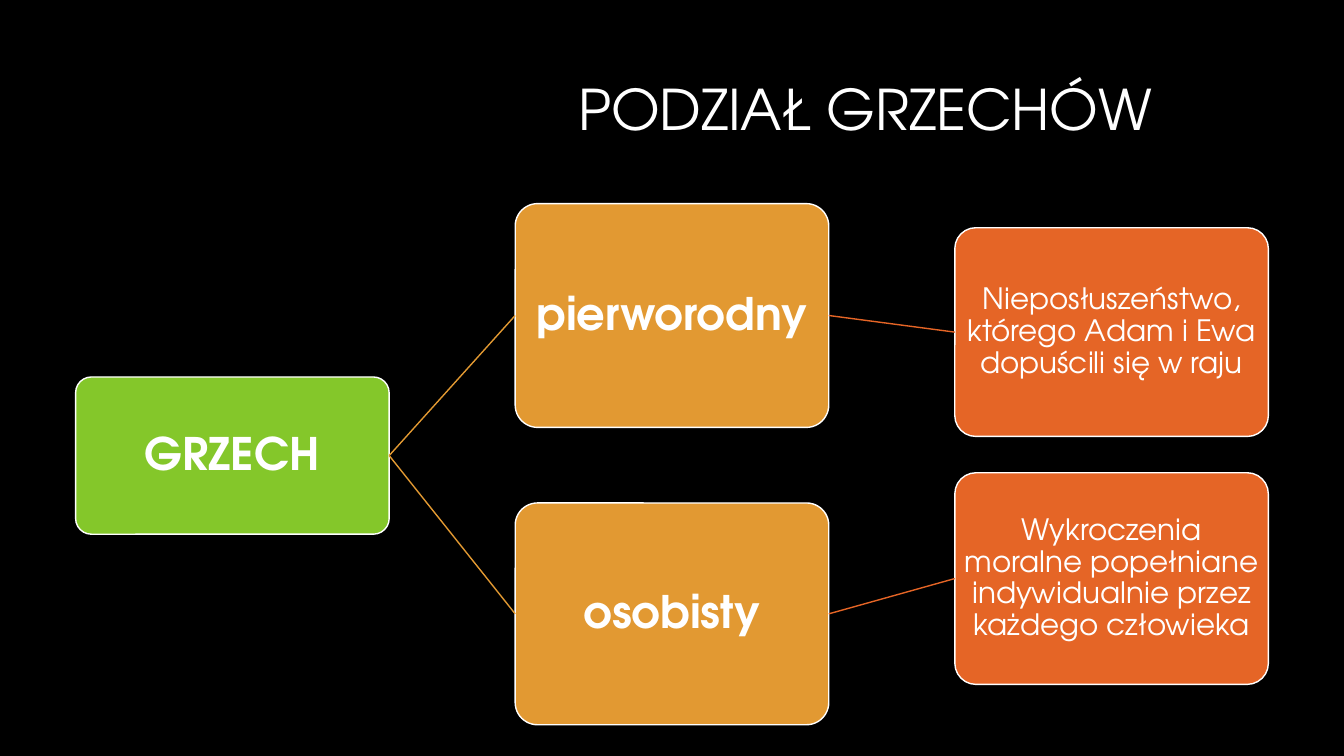
from lxml import etree
from pptx import Presentation
from pptx.dml.color import RGBColor
from pptx.enum.shapes import MSO_CONNECTOR, MSO_SHAPE
from pptx.enum.text import MSO_ANCHOR, MSO_AUTO_SIZE, PP_ALIGN
from pptx.oxml.ns import qn
from pptx.util import Inches, Pt

ROUNDED = MSO_SHAPE.ROUNDED_RECTANGLE
STRAIGHT = MSO_CONNECTOR.STRAIGHT
MIDDLE = MSO_ANCHOR.MIDDLE
NO_FIT = MSO_AUTO_SIZE.NONE
CENTER, RIGHT = PP_ALIGN.CENTER, PP_ALIGN.RIGHT
LEFT_SIDE, RIGHT_SIDE = 1, 3

FONT = "TeX Gyre Adventor"
COLORS = {"background": "000000", "text": "FFFFFF", "root": "84C72A",
          "kind": "E29932", "meaning": "E56526"}
NODE_WIDTH = 3.11
# level: left edge, text size, bold, inset
LEVELS = {"root": (0.75, 32, True, 0.02),
          "kind": (5.11, 32, True, 0.02),
          "meaning": (9.47, 21, False, 0.01)}
# text, level, top, height, parent
NODES = [
    ("GRZECH", "root", 3.74, 1.56, None),
    ("pierworodny", "kind", 2.02, 2.22, "GRZECH"),
    ("Nieposłuszeństwo, którego Adam i Ewa dopuścili się w raju",
     "meaning", 2.26, 2.07, "pierworodny"),
    ("osobisty", "kind", 4.99, 2.2, "GRZECH"),
    ("Wykroczenia moralne popełniane indywidualnie przez każdego człowieka",
     "meaning", 4.69, 2.1, "osobisty"),
]


def color(name):
    return RGBColor.from_string(COLORS[name])


def write(frame, text, size, bold, alignment):
    frame.text = text
    frame.word_wrap = True
    frame.auto_size = NO_FIT
    frame.vertical_anchor = MIDDLE
    paragraph = frame.paragraphs[0]
    paragraph.alignment = alignment
    paragraph.line_spacing = 0.9
    font = paragraph.runs[0].font
    for key, value in {"name": FONT, "size": Pt(size), "bold": bold}.items():
        setattr(font, key, value)
    font.color.rgb = color("text")


presentation = Presentation()
presentation.slide_width = Inches(13.33)
presentation.slide_height = Inches(7.5)
slide = presentation.slides.add_slide(presentation.slide_layouts[5])
slide.background.fill.solid()
slide.background.fill.fore_color.rgb = color("background")

title = slide.shapes.title
title_box = {"left": 3.17, "top": 0.7, "width": 8.36, "height": 0.83}
for side, length in title_box.items():
    setattr(title, side, Inches(length))
write(title.text_frame, "PODZIAŁ GRZECHÓW", 40, False, RIGHT)

nodes = {}
for text, level, top, height, parent in NODES:
    left, size, bold, inset = LEVELS[level]
    node = slide.shapes.add_shape(ROUNDED, Inches(left), Inches(top),
                                  Inches(NODE_WIDTH), Inches(height))
    node.adjustments[0] = 0.1
    node.shadow.inherit = False
    node.fill.solid()
    node.fill.fore_color.rgb = color(level)
    node.line.color.rgb = color("text")
    node.line.width = Pt(1)
    for side in ("left", "top", "right", "bottom"):
        setattr(node.text_frame, f"margin_{side}", Inches(inset))
    write(node.text_frame, text, size, bold, CENTER)
    nodes[text] = node

    if parent:
        branch = slide.shapes.add_connector(STRAIGHT, 0, 0, 0, 0)
        branch.begin_connect(nodes[parent], RIGHT_SIDE)
        branch.end_connect(node, LEFT_SIDE)
        branch.line.color.rgb = color(level)
        branch.line.width = Pt(1)
        etree.SubElement(branch._element.spPr, qn("a:effectLst"))

presentation.save("out.pptx")
